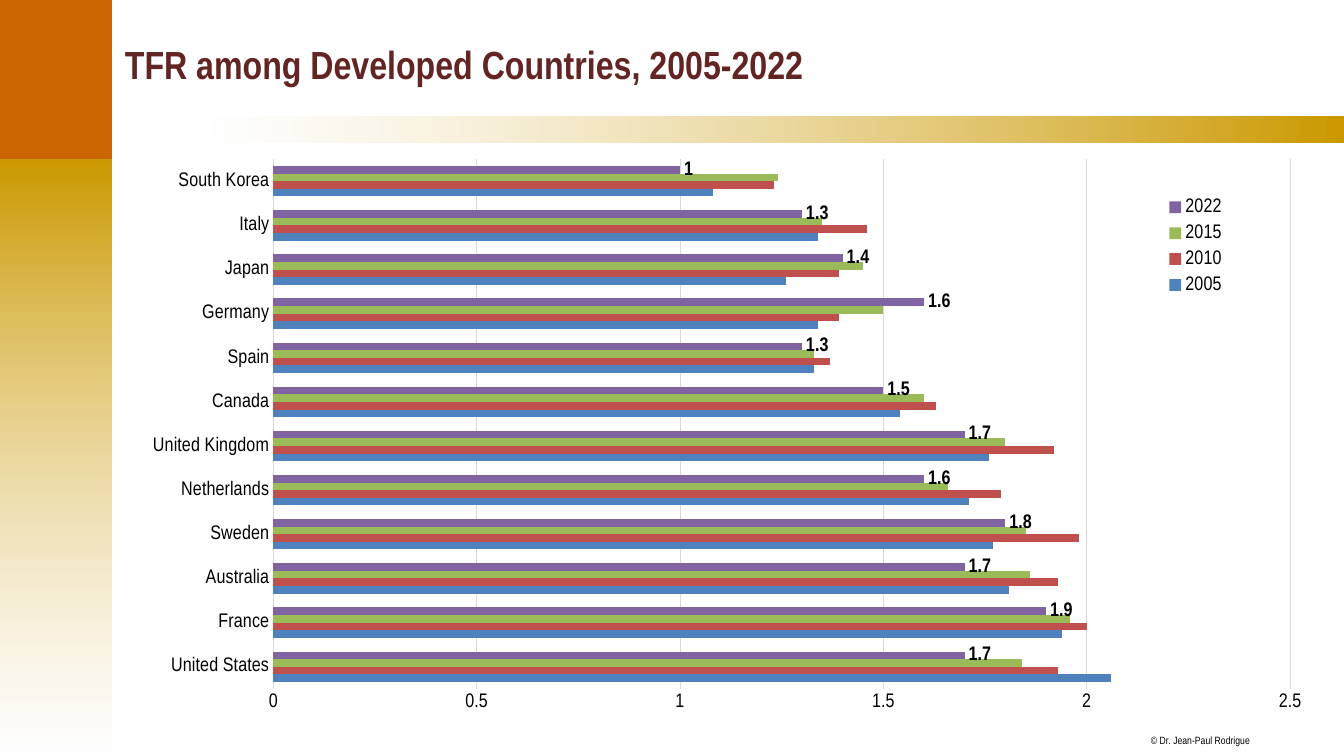
from dataclasses import dataclass

from lxml import etree
from pptx import Presentation
from pptx import util as u
from pptx.chart.data import CategoryChartData
from pptx.dml.color import RGBColor
from pptx.enum import chart as charts, shapes, text
from pptx.oxml import parse_xml
from pptx.oxml.ns import nsdecls, qn


@dataclass(frozen=True)
class Theme:
    font: str = "Arial Narrow"
    ink: str = "000000"
    heading: str = "632523"
    gold: str = "CC9900"
    orange: str = "CC6600"
    white: str = "FFFFFF"
    grid: str = "D9D9D9"
    years: tuple = ("4F81BD", "C0504D", "9BBB59", "8064A2")
    title_size: float = 28
    chart_size: float = 14
    credit_size: float = 7.5


THEME = Theme()
PX = 914400 / 100.8

COUNTRIES = ["United States", "France", "Australia", "Sweden", "Netherlands", "United Kingdom",
             "Canada", "Spain", "Germany", "Japan", "Italy", "South Korea"]
FERTILITY = {
    "2005": [2.06, 1.94, 1.81, 1.77, 1.71, 1.76, 1.54, 1.33, 1.34, 1.26, 1.34, 1.08],
    "2010": [1.93, 2, 1.93, 1.98, 1.79, 1.92, 1.63, 1.37, 1.39, 1.39, 1.46, 1.23],
    "2015": [1.84, 1.96, 1.86, 1.85, 1.66, 1.8, 1.6, 1.33, 1.5, 1.45, 1.35, 1.24],
    "2022": [1.7, 1.9, 1.7, 1.8, 1.6, 1.7, 1.5, 1.3, 1.6, 1.4, 1.3, 1],
}


def px(*lengths):
    return [u.Emu(round(length * PX)) for length in lengths]


def rgb(color):
    return RGBColor.from_string(color)


def style(font, size, color=THEME.ink, bold=False):
    font.name = THEME.font
    font.size = u.Pt(size)
    font.bold = bold
    font.color.rgb = rgb(color)


def add_band(slide, box):
    band = slide.shapes.add_shape(shapes.MSO_SHAPE.RECTANGLE, *px(*box))
    band.shadow.inherit = False
    band.line.fill.background()
    return band


def add_fade(slide, box, stops, angle):
    band = add_band(slide, box)
    band.fill.gradient()
    band.fill.gradient_angle = angle
    for stop, (color, opacity) in zip(band.fill.gradient_stops, stops):
        stop.color.rgb = rgb(color)
    for tint, (color, opacity) in zip(band._element.spPr.iter(qn("a:srgbClr")), stops):
        etree.SubElement(tint, qn("a:alpha")).set("val", str(opacity * 1000))


def add_frame(slide, box):
    left, top, width, height = box
    corner = 159
    add_fade(slide, (left, top + corner, 112, height - corner),
             [(THEME.gold, 100), (THEME.white, 51)], 270)
    add_fade(slide, (left + 213, top + 117, width - 213, 26),
             [(THEME.white, 50), (THEME.gold, 100)], 0)
    add_band_fill = add_band(slide, (left, top, 112, corner)).fill
    add_band_fill.solid()
    add_band_fill.fore_color.rgb = rgb(THEME.orange)


def add_label(slide, box, wording, size, color, bold=False, inset=(0, 0), wrap=True):
    frame = slide.shapes.add_textbox(*px(*box)).text_frame
    frame.word_wrap = wrap
    frame.vertical_anchor = text.MSO_ANCHOR.MIDDLE
    frame.margin_left, frame.margin_top = px(*inset)
    frame.margin_right, frame.margin_bottom = px(*inset)
    frame.text = wording
    style(frame.paragraphs[0].runs[0].font, size, color, bold)


def set_layout(parent, before, x, y, w, h, inner=False):
    for old in parent.findall(qn("c:layout")):
        parent.remove(old)
    target = '<c:layoutTarget val="inner"/>' if inner else ""
    layout = parse_xml(
        f'<c:layout {nsdecls("c")}><c:manualLayout>{target}'
        '<c:xMode val="edge"/><c:yMode val="edge"/>'
        f'<c:x val="{x}"/><c:y val="{y}"/><c:w val="{w}"/><c:h val="{h}"/>'
        '</c:manualLayout></c:layout>')
    parent.insert(before, layout)


def add_fertility_chart(slide, box):
    data = CategoryChartData()
    data.categories = COUNTRIES
    for year, rates in FERTILITY.items():
        data.add_series(year, rates)
    chart = slide.shapes.add_chart(charts.XL_CHART_TYPE.BAR_CLUSTERED, *px(*box), data).chart
    style(chart.font, THEME.chart_size)
    chart.has_title = False

    bars = chart.plots[0]
    bars.gap_width = 182
    bars.overlap = 0
    bars.vary_by_categories = False
    for series, color in zip(bars.series, THEME.years):
        series.format.fill.solid()
        series.format.fill.fore_color.rgb = rgb(color)
    labels = bars.series[-1].data_labels
    labels.show_value = True
    labels.position = charts.XL_LABEL_POSITION.OUTSIDE_END
    style(labels.font, THEME.chart_size, bold=True)

    countries, rates = chart.category_axis, chart.value_axis
    for axis in (countries, rates):
        axis.major_tick_mark = axis.minor_tick_mark = charts.XL_TICK_MARK.NONE
        style(axis.tick_labels.font, THEME.chart_size)
    rates.minimum_scale, rates.maximum_scale, rates.major_unit = 0, 2.5, 0.5
    rates.has_major_gridlines = True
    rates.format.line.fill.background()
    for line in (countries.format.line, rates.major_gridlines.format.line):
        line.color.rgb = rgb(THEME.grid)
        line.width = u.Pt(0.75)

    chart.has_legend = True
    legend = chart.legend
    legend.position = charts.XL_LEGEND_POSITION.BOTTOM
    legend.include_in_layout = False
    style(legend.font, THEME.chart_size)
    set_layout(legend._element, 1, 0.86, 0.08, 0.07, 0.19)
    set_layout(chart._chartSpace.chart.plotArea, 0, 0.134, 0.026, 0.839, 0.907, inner=True)


def add_chart_slide(deck, box):
    slide = deck.slides.add_slide(deck.slide_layouts[6])
    left, top, width, height = box
    add_frame(slide, box)
    add_label(slide, (left + 1151, top + 734, 100, 13), "© Dr. Jean-Paul Rodrigue",
              THEME.credit_size, THEME.ink, wrap=False)
    add_label(slide, (left + 115, top + 11, 1207, 105), "TFR among Developed Countries, 2005-2022",
              THEME.title_size, THEME.heading, bold=True, inset=(10, 5))
    add_fertility_chart(slide, (left + 111, top + 144, 1212, 584))


def main():
    deck = Presentation()
    deck.slide_width, deck.slide_height = px(1344, 756)
    add_chart_slide(deck, (0, 0, 1344, 756))
    deck.save("out.pptx")


if __name__ == "__main__":
    main()
